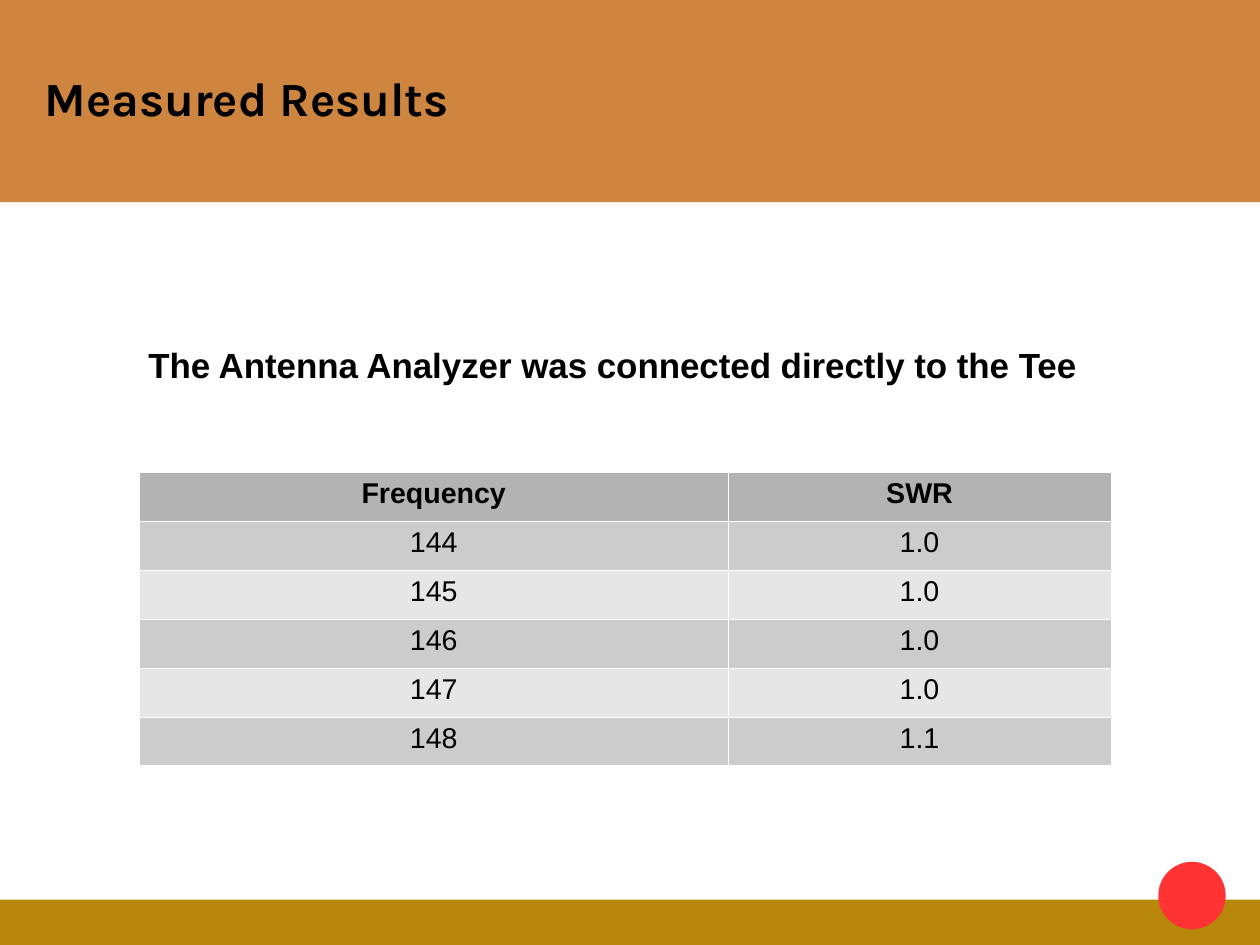
from lxml.etree import SubElement
from pptx import Presentation
from pptx.dml.color import RGBColor
from pptx.enum.shapes import MSO_SHAPE
from pptx.enum.text import MSO_ANCHOR, PP_ALIGN
from pptx.oxml.ns import qn
from pptx.util import Inches, Pt

BLACK = RGBColor(0x00, 0x00, 0x00)
WHITE = RGBColor(0xFF, 0xFF, 0xFF)
COPPER = RGBColor(0xCD, 0x85, 0x3F)
GOLD = RGBColor(0xB8, 0x86, 0x0B)
RED = RGBColor(0xFF, 0x33, 0x33)
HEADER_GREY = RGBColor(0xB3, 0xB3, 0xB3)
BAND_GREYS = (RGBColor(0xE6, 0xE6, 0xE6), RGBColor(0xCC, 0xCC, 0xCC))

CM_PER_INCH = 2.54
PAGE_WIDTH, PAGE_HEIGHT = 28 / CM_PER_INCH, 21 / CM_PER_INCH
RESULTS = [
    ("Frequency", "SWR"),
    ("144", "1.0"),
    ("145", "1.0"),
    ("146", "1.0"),
    ("147", "1.0"),
    ("148", "1.1"),
]


def add_filled_shape(page, kind, box, color):
    """Add a flat preset shape without outline or shadow."""
    shape = page.shapes.add_shape(kind, *map(Inches, box))
    shape.shadow.inherit = False
    shape.fill.solid()
    shape.fill.fore_color.rgb = color
    shape.line.fill.background()


def style_paragraph(para, font_name, size, bold):
    """Set the font of a whole paragraph."""
    font = para.font
    font.name, font.size, font.bold = font_name, Pt(size), bold
    font.color.rgb = BLACK


def add_text(page, box, text, font_name, size):
    """Add a bold line of text and return its frame."""
    frame = page.shapes.add_textbox(*map(Inches, box)).text_frame
    frame.word_wrap = True
    frame.text = text
    style_paragraph(frame.paragraphs[0], font_name, size, True)
    return frame


def add_header(page, box):
    """Draw the title band with its title."""
    left, top, width, height = box
    add_filled_shape(page, MSO_SHAPE.RECTANGLE, box, COPPER)
    title_box = (left + 0.39, top + 0.33, width - 0.78, height - 0.72)
    frame = add_text(page, title_box, "Measured Results", "Karla", 30)
    frame.vertical_anchor = MSO_ANCHOR.MIDDLE
    frame.margin_left = frame.margin_right = 0
    frame.margin_top = frame.margin_bottom = 0


def add_footer(page, box):
    """Draw the footer band with the red dot near its right end."""
    left, top, width, height = box
    add_filled_shape(page, MSO_SHAPE.RECTANGLE, box, GOLD)
    dot_box = (left + width - 0.89, top - 0.33, 0.59, 0.59)
    add_filled_shape(page, MSO_SHAPE.OVAL, dot_box, RED)


def add_cell_borders(cell):
    """Give all four sides of a cell a thin white border."""
    properties = cell._tc.get_or_add_tcPr()
    for index, side in enumerate(("a:lnL", "a:lnR", "a:lnT", "a:lnB")):
        border = SubElement(properties, qn(side), w=str(Pt(0.06)))
        properties.insert(index, border)
        fill = SubElement(border, qn("a:solidFill"))
        SubElement(fill, qn("a:srgbClr"), val=str(WHITE))


def add_results_table(page, box):
    """Draw the banded table of measured values."""
    column_widths = (5.15, box[2] - 5.15)
    table = page.shapes.add_table(
        len(RESULTS), len(column_widths), *map(Inches, box)
    ).table
    for column, width in zip(table.columns, column_widths):
        column.width = Inches(width)
    for row_index, values in enumerate(RESULTS):
        is_header = row_index == 0
        for column_index, value in enumerate(values):
            cell = table.cell(row_index, column_index)
            cell.text = value
            cell.fill.solid()
            cell.fill.fore_color.rgb = HEADER_GREY if is_header else BAND_GREYS[row_index % 2]
            para = cell.text_frame.paragraphs[0]
            para.alignment = PP_ALIGN.CENTER
            style_paragraph(para, "Arial", 18, is_header)
            add_cell_borders(cell)


def main():
    """Build and save the measured results slide."""
    deck = Presentation()
    deck.slide_width, deck.slide_height = Inches(PAGE_WIDTH), Inches(PAGE_HEIGHT)
    page = deck.slides.add_slide(deck.slide_layouts[6])
    add_footer(page, (0, 7.87, PAGE_WIDTH, PAGE_HEIGHT - 7.87))
    add_header(page, (0, 0, PAGE_WIDTH, 1.77))
    add_results_table(page, (1.22, 4.13, 8.5, 2.57))
    add_text(
        page, (1.2, 2.96, 8.7, 0.44),
        "The Antenna Analyzer was connected directly to the Tee", "Arial", 22,
    )
    deck.save("out.pptx")


if __name__ == "__main__":
    main()
